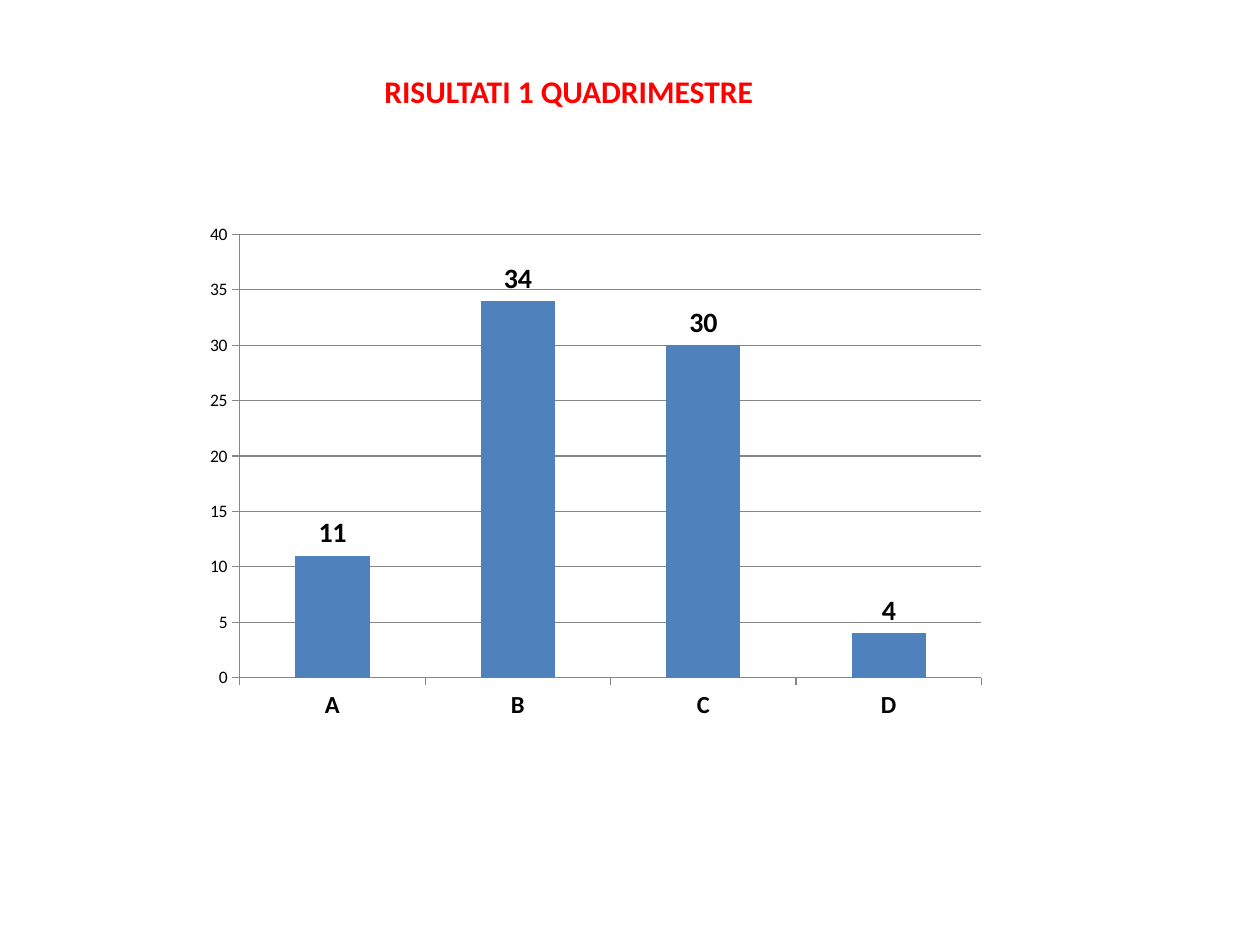
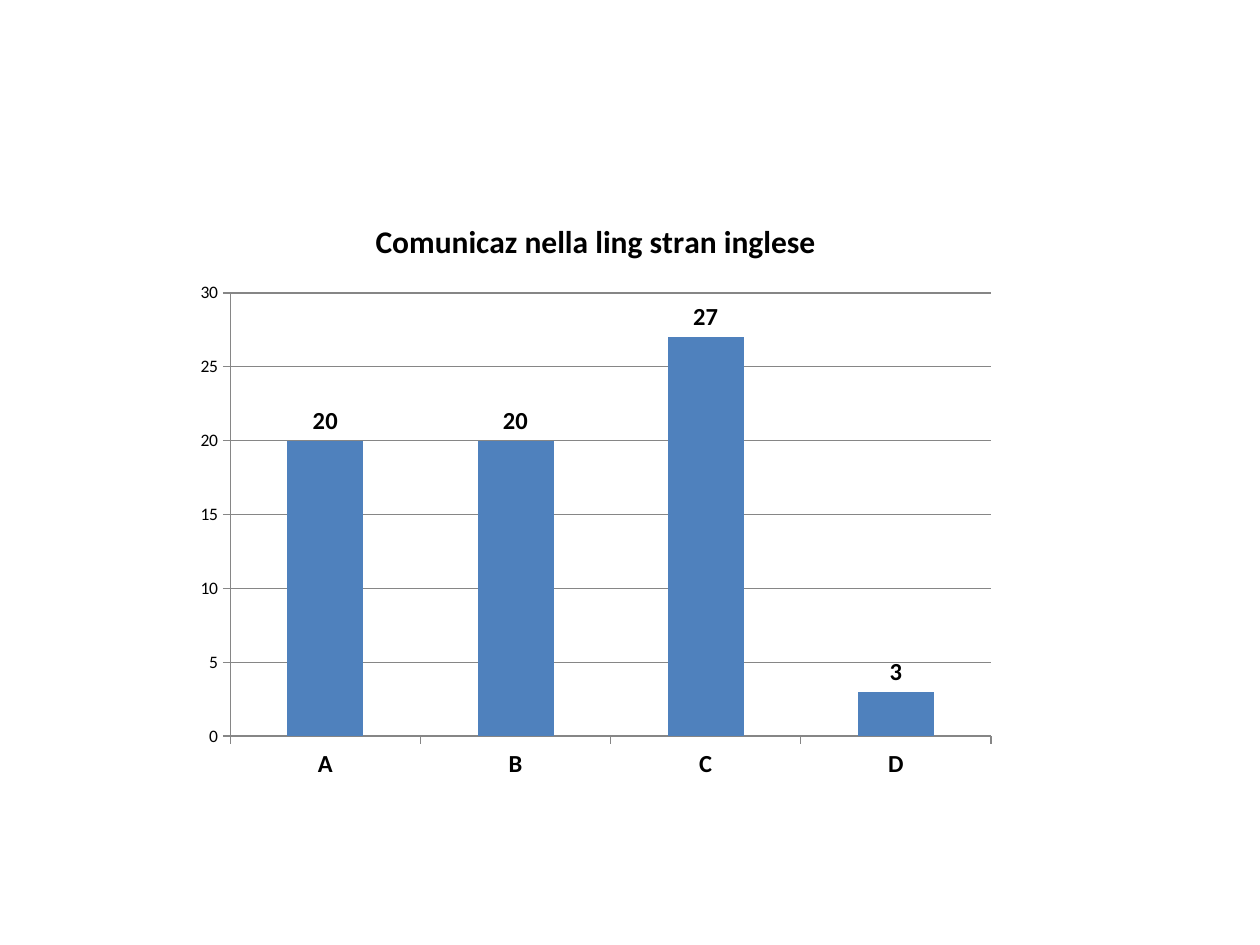
from pptx import Presentation
from pptx import util as u
from pptx.chart import data as chart_data
from pptx.dml import color
from pptx.enum import chart as ch

COLORS = {"heading": "FF0000", "bar": "4F81BD", "text": "000000", "axis": "868686"}
FONT = "Calibri"
GRADES = ["A", "B", "C", "D"]


def rgb(name):
    return color.RGBColor.from_string(COLORS[name])


class Deck:
    def __init__(self):
        self.prs = Presentation()
        self.prs.slide_width, self.prs.slide_height = u.Cm(25.4), u.Cm(19.05)
        self.slide = None

    def new_slide(self):
        self.slide = self.prs.slides.add_slide(self.prs.slide_layouts[6])

    def style(self, font, size, tint="text", bold=False):
        font.name, font.size, font.bold = FONT, u.Pt(size), bold
        font.color.rgb = rgb(tint)

    def heading(self, words, left, top, width, height):
        frame = self.slide.shapes.add_textbox(
            u.Cm(left), u.Cm(top), u.Cm(width), u.Cm(height)).text_frame
        frame.word_wrap = True
        frame.text = words
        self.style(frame.paragraphs[0].runs[0].font, 18, "heading", True)

    def grade_chart(self, counts, left, top, width, height,
                    series_name="Series 1", title=None, label_size=14):
        results = chart_data.CategoryChartData()
        results.categories = GRADES
        results.add_series(series_name, counts)
        chart = self.slide.shapes.add_chart(
            ch.XL_CHART_TYPE.COLUMN_CLUSTERED, u.Cm(left), u.Cm(top),
            u.Cm(width), u.Cm(height), results).chart
        self.style(chart.font, 10)
        chart.has_legend = False

        # Chart title
        chart.has_title = title is not None
        if title:
            chart.chart_title.text_frame.text = title
            run = chart.chart_title.text_frame.paragraphs[0].runs[0]
            self.style(run.font, 18, bold=True)
            chart.chart_title.include_in_layout = False

        # Axes and gridlines
        grades, scale = chart.category_axis, chart.value_axis
        for axis in (grades, scale):
            axis.major_tick_mark = ch.XL_TICK_MARK.OUTSIDE
            axis.minor_tick_mark = ch.XL_TICK_MARK.NONE
        scale.has_major_gridlines = True
        for line in (grades.format.line, scale.format.line,
                     scale.major_gridlines.format.line):
            line.color.rgb = rgb("axis")
            line.width = u.Pt(0.75)
        self.style(grades.tick_labels.font, 14, bold=True)
        self.style(scale.tick_labels.font, 10)

        # Bars and their values
        plot = chart.plots[0]
        plot.gap_width = 150
        plot.vary_by_categories = False
        bars = plot.series[0]
        bars.format.fill.solid()
        bars.format.fill.fore_color.rgb = rgb("bar")
        labels = bars.data_labels
        labels.show_value = True
        labels.position = ch.XL_LABEL_POSITION.OUTSIDE_END
        self.style(labels.font, label_size, bold=True)


def main():
    deck = Deck()

    # First-term results
    deck.new_slide()
    deck.grade_chart([11, 34, 30, 4], 3.91, 4.32, 16.2, 10.41, label_size=16)
    deck.heading("RISULTATI 1 QUADRIMESTRE", 7.5, 1.32, 8.4, 1.02)

    # English
    deck.new_slide()
    subject = "Comunicaz nella ling stran inglese"
    deck.grade_chart([20, 20, 27, 3], 3.71, 3.94, 16.6, 12,
                     series_name=subject, title=subject)

    deck.prs.save("out.pptx")


if __name__ == "__main__":
    main()
